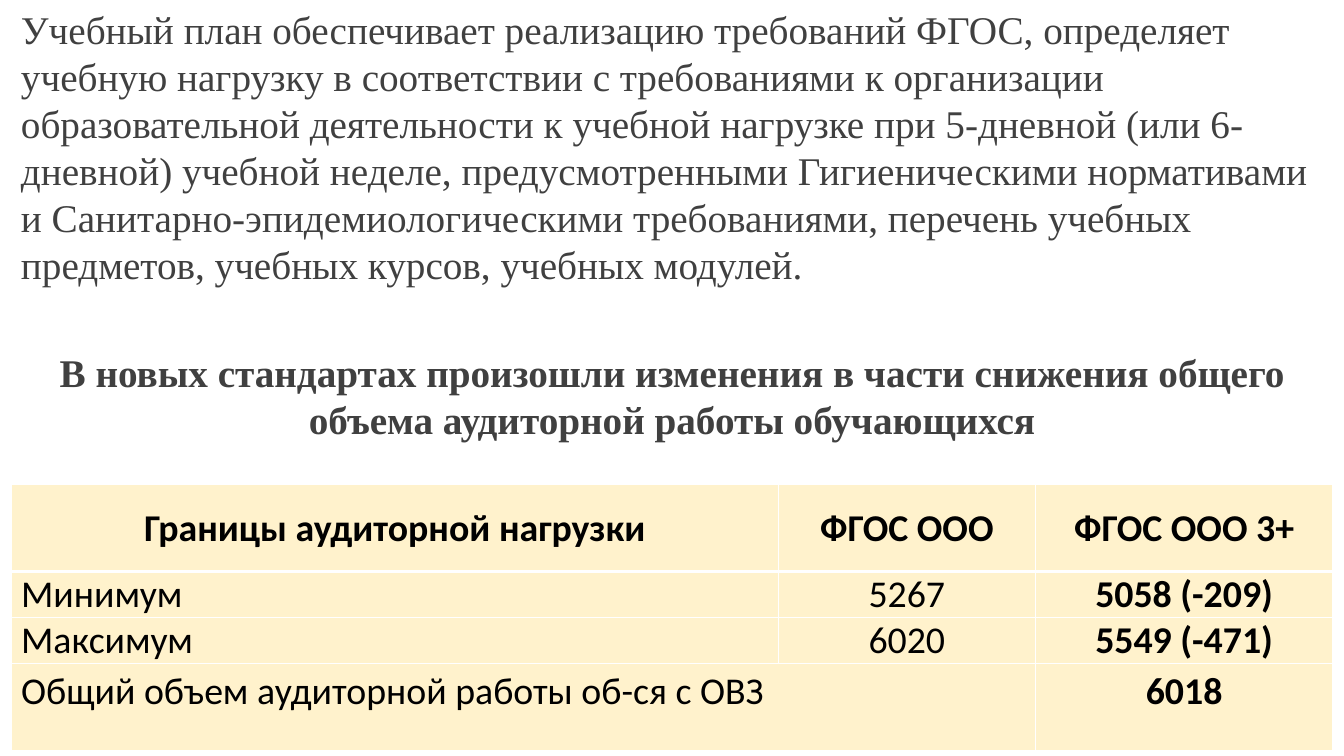
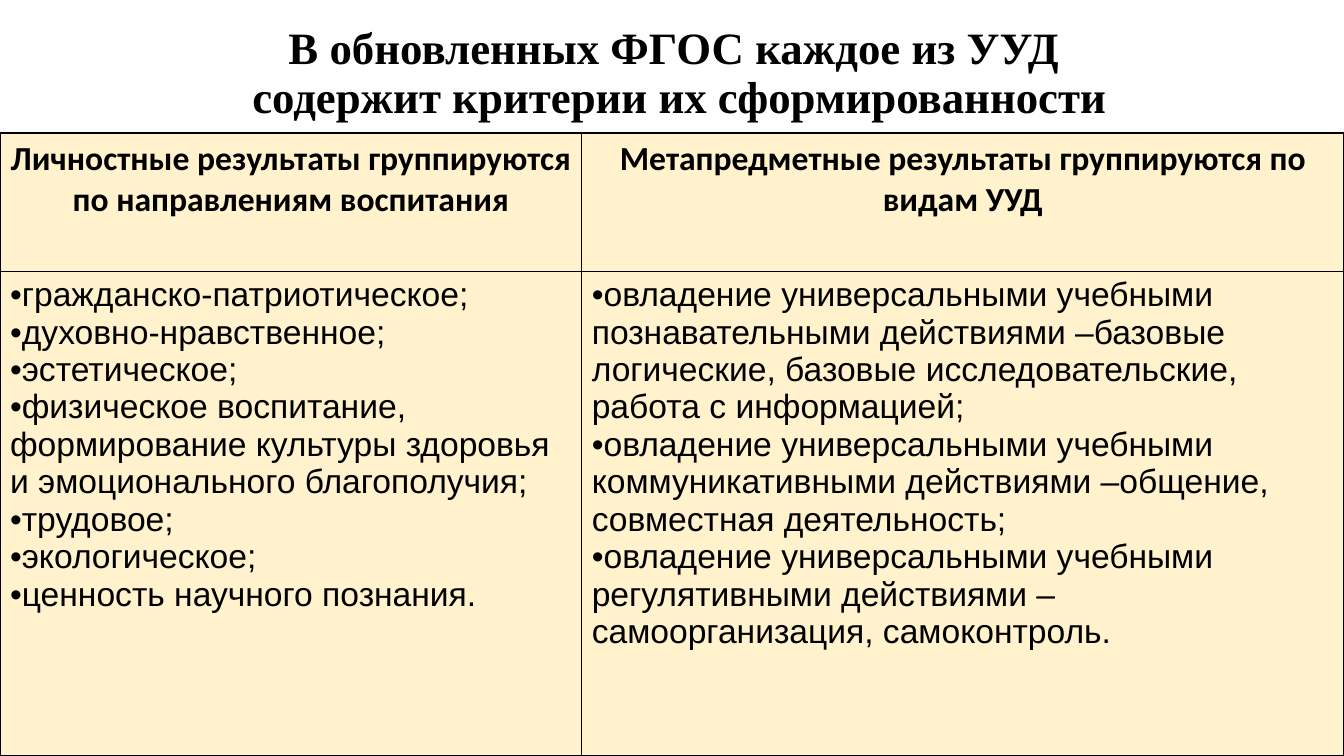
from dataclasses import dataclass

from lxml import etree
from pptx import Presentation
from pptx.dml.color import RGBColor
from pptx.enum.text import MSO_ANCHOR, PP_ALIGN
from pptx.oxml import ns
from pptx.util import Inches, Pt


@dataclass(frozen=True)
class Theme:
    ink: str = "000000"
    prose_ink: str = "404040"
    cream: str = "FFF2CC"
    white: str = "FFFFFF"
    serif: str = "Times New Roman"
    sans: str = "Calibri"
    list_font: str = "Arial"
    title_size: int = 32
    prose_size: int = 28
    hours_size: int = 27
    results_size: int = 24
    rule: int = 1
    header_rule: int = 3


THEME = Theme()


@dataclass(frozen=True)
class TextStyle:
    font: str
    size: int
    color: str = THEME.ink
    bold: bool = False
    align: PP_ALIGN = PP_ALIGN.LEFT
    anchor: MSO_ANCHOR = MSO_ANCHOR.TOP
    line_spacing: float = 1.0


@dataclass(frozen=True)
class Box:
    left: float
    top: float
    width: float
    height: float

    def lengths(self) -> tuple:
        return tuple(Inches(v) for v in (self.left, self.top, self.width, self.height))


@dataclass(frozen=True)
class CellContent:
    paragraphs: tuple[str, ...]
    style: TextStyle
    vertical_inset: float = 0.05
    span: int = 1


@dataclass(frozen=True)
class Grid:
    box: Box
    columns: tuple[float, ...]
    heights: tuple[float, ...]
    rows: tuple[tuple[CellContent, ...], ...]
    border: str
    header_rule: int = THEME.rule


CENTER = PP_ALIGN.CENTER
MIDDLE = MSO_ANCHOR.MIDDLE
TITLE = TextStyle(THEME.serif, THEME.title_size, bold=True, align=CENTER,
                  anchor=MIDDLE, line_spacing=0.9)
PROSE = TextStyle(THEME.serif, THEME.prose_size, THEME.prose_ink)
STATEMENT = TextStyle(THEME.serif, THEME.prose_size, THEME.prose_ink, True, CENTER)
HOURS_HEAD = TextStyle(THEME.sans, THEME.hours_size, bold=True, align=CENTER, anchor=MIDDLE)
HOURS_LABEL = TextStyle(THEME.sans, THEME.hours_size)
HOURS_OLD = TextStyle(THEME.sans, THEME.hours_size, align=CENTER)
HOURS_NEW = TextStyle(THEME.sans, THEME.hours_size, bold=True, align=CENTER)
RESULTS_HEAD = TextStyle(THEME.sans, THEME.results_size, bold=True, align=CENTER)
RESULTS_LIST = TextStyle(THEME.list_font, THEME.results_size)


def write_paragraphs(frame, paragraphs: tuple[str, ...], style: TextStyle) -> None:
    frame.word_wrap = True
    for index, content in enumerate(paragraphs):
        paragraph = frame.add_paragraph() if index else frame.paragraphs[0]
        paragraph.alignment = style.align
        paragraph.line_spacing = style.line_spacing
        for number, line in enumerate(content.split("\n")):
            if number:
                paragraph.add_line_break()
            run = paragraph.add_run()
            run.text = line
            run.font.name = style.font
            run.font.size = Pt(style.size)
            run.font.bold = style.bold
            run.font.color.rgb = RGBColor.from_string(style.color)


def add_text(slide, box: Box, content: str, style: TextStyle) -> None:
    frame = slide.shapes.add_textbox(*box.lengths()).text_frame
    frame.vertical_anchor = style.anchor
    write_paragraphs(frame, (content,), style)


def set_borders(cell, color: str, widths: dict[str, int]) -> None:
    properties = cell._tc.get_or_add_tcPr()
    for position, (side, width) in enumerate(widths.items()):
        line = etree.Element(ns.qn(f"a:ln{side}"), w=str(Pt(width)))
        fill = etree.SubElement(line, ns.qn("a:solidFill"))
        etree.SubElement(fill, ns.qn("a:srgbClr"), val=color)
        properties.insert(position, line)


def fill_cell(cell, content: CellContent) -> None:
    cell.vertical_anchor = content.style.anchor
    cell.margin_top = cell.margin_bottom = Inches(content.vertical_inset)
    write_paragraphs(cell.text_frame, content.paragraphs, content.style)


def add_grid(slide, grid: Grid) -> None:
    table = slide.shapes.add_table(
        len(grid.heights), len(grid.columns), *grid.box.lengths()).table
    table.horz_banding = False
    for column, width in zip(table.columns, grid.columns):
        column.width = Inches(width)
    for row, height in zip(table.rows, grid.heights):
        row.height = Inches(height)
    for r in range(len(grid.heights)):
        for c in range(len(grid.columns)):
            cell = table.cell(r, c)
            cell.fill.solid()
            cell.fill.fore_color.rgb = RGBColor.from_string(THEME.cream)
            widths = dict.fromkeys("LRTB", THEME.rule)
            if r < 2:
                widths["T" if r else "B"] = grid.header_rule
            set_borders(cell, grid.border, widths)
    for r, contents in enumerate(grid.rows):
        c = 0
        for content in contents:
            if content.span > 1:
                table.cell(r, c).merge(table.cell(r, c + content.span - 1))
            fill_cell(table.cell(r, c), content)
            c += content.span


def hours_row(label: str, old: str, new: str) -> tuple[CellContent, ...]:
    styles = (HOURS_LABEL, HOURS_OLD, HOURS_NEW)
    return tuple(CellContent((value,), style, 0)
                 for value, style in zip((label, old, new), styles))


CURRICULUM = (
    "Учебный план обеспечивает реализацию требований ФГОС, определяет учебную нагрузку "
    "в соответствии с требованиями к организации образовательной деятельности к учебной "
    "нагрузке при 5-дневной (или 6-дневной) учебной неделе, предусмотренными "
    "Гигиеническими нормативами и Санитарно-эпидемиологическими требованиями, перечень "
    "учебных предметов, учебных курсов, учебных модулей."
)
REDUCTION = ("В новых стандартах произошли изменения в части снижения общего объема "
             "аудиторной работы обучающихся")
CRITERIA = "В обновленных ФГОС каждое из УУД \nсодержит критерии их сформированности"

HOURS = Grid(
    box=Box(0.11, 4.81, 13.11, 2.54),
    columns=(7.61, 2.55, 2.95),
    heights=(0.86, 0.41, 0.41, 0.86),
    rows=(
        tuple(CellContent((heading,), HOURS_HEAD, 0) for heading in
              ("Границы аудиторной нагрузки", "ФГОС ООО", "ФГОС ООО 3+")),
        hours_row("Минимум", "5267", "5058 (-209)"),
        hours_row("Максимум", "6020", "5549 (-471)"),
        (CellContent(("Общий объем аудиторной работы об-ся с ОВЗ",), HOURS_LABEL, span=2),
         CellContent(("6018",), HOURS_NEW)),
    ),
    border=THEME.white,
    header_rule=THEME.header_rule,
)

RESULTS = Grid(
    box=Box(0, 1.32, 13.33, 6.18),
    columns=(5.77, 7.56),
    heights=(1.37, 4.81),
    rows=(
        tuple(CellContent((heading,), RESULTS_HEAD) for heading in
              ("Личностные результаты группируются по направлениям воспитания",
               "Метапредметные результаты группируются по видам УУД")),
        (CellContent((
            "•гражданско-патриотическое;",
            "•духовно-нравственное;",
            "•эстетическое;",
            "•физическое воспитание, формирование культуры здоровья "
            "и эмоционального благополучия;",
            "•трудовое;",
            "•экологическое;",
            "•ценность научного познания.",
        ), RESULTS_LIST),
         CellContent((
             "•овладение универсальными учебными познавательными действиями –базовые "
             "логические, базовые исследовательские, работа с информацией;",
             "•овладение универсальными учебными коммуникативными действиями –общение, "
             "совместная деятельность;",
             "•овладение универсальными учебными регулятивными действиями "
             "–самоорганизация, самоконтроль.",
         ), RESULTS_LIST)),
    ),
    border=THEME.ink,
)


def main() -> None:
    deck = Presentation()
    deck.slide_width, deck.slide_height = Inches(13.33), Inches(7.5)
    blank = deck.slide_layouts[6]

    workload = deck.slides.add_slide(blank)
    add_grid(workload, HOURS)
    add_text(workload, Box(0.11, 3.41, 13.11, 1.51), REDUCTION, STATEMENT)
    add_text(workload, Box(0.11, 0, 13.22, 2.93), CURRICULUM, PROSE)

    outcomes = deck.slides.add_slide(blank)
    add_text(outcomes, Box(0.15, 0.08, 13.18, 1.32), CRITERIA, TITLE)
    add_grid(outcomes, RESULTS)

    deck.save("out.pptx")


if __name__ == "__main__":
    main()
